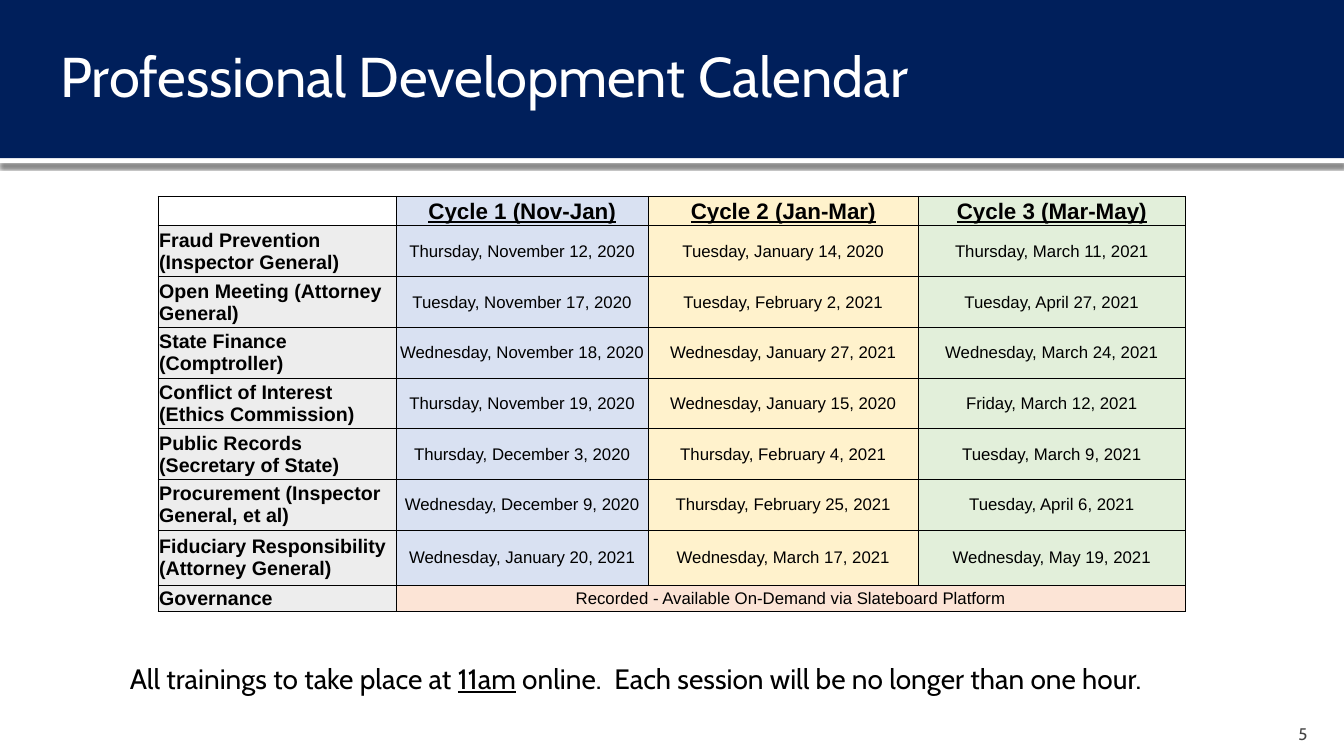
from dataclasses import dataclass

from lxml.etree import SubElement
from pptx import Presentation
from pptx.dml.color import RGBColor
from pptx.enum.shapes import MSO_SHAPE
from pptx.enum.text import MSO_ANCHOR, PP_ALIGN
from pptx.oxml import parse_xml
from pptx.oxml.ns import nsdecls, qn
from pptx.util import Pt

WIDE, HIGH = 960, 540
NAVY, WHITE, BLACK, GRAY = "001F5B", "FFFFFF", "000000", "454545"
SIDE, CLOUD = "EDEDED", "FCE4D6"
LEFT, MID, RIGHT = PP_ALIGN.LEFT, PP_ALIGN.CENTER, PP_ALIGN.RIGHT


@dataclass
class Cycle:
    name: str
    fill: str
    width: float


@dataclass
class Course:
    name: str
    dates: tuple[str, ...]
    height: float = 36.2


@dataclass
class Label:
    runs: tuple[str, ...]
    box: tuple[float, float, float, float]
    size: float
    color: str
    align: PP_ALIGN = LEFT
    anchor: MSO_ANCHOR = MSO_ANCHOR.TOP
    pads: tuple[float, float, float, float] = (7.2, 3.6, 7.2, 3.6)


CYCLES = [
    Cycle("Cycle 1 (Nov-Jan)", "D9E1F2", 180),
    Cycle("Cycle 2 (Jan-Mar)", "FFF2CC", 193),
    Cycle("Cycle 3 (Mar-May)", "E2EFDA", 190.7),
]
COURSES = [
    Course("Fraud Prevention (Inspector General)",
           ("Thursday, November 12, 2020", "Tuesday, January 14, 2020", "Thursday, March 11, 2021")),
    Course("Open Meeting (Attorney General)",
           ("Tuesday, November 17, 2020", "Tuesday, February 2, 2021", "Tuesday, April 27, 2021")),
    Course("State Finance (Comptroller)",
           ("Wednesday, November 18, 2020", "Wednesday, January 27, 2021", "Wednesday, March 24, 2021")),
    Course("Conflict of Interest (Ethics Commission)",
           ("Thursday, November 19, 2020", "Wednesday, January 15, 2020", "Friday, March 12, 2021")),
    Course("Public Records (Secretary of State)",
           ("Thursday, December 3, 2020", "Thursday, February 4, 2021", "Tuesday, March 9, 2021")),
    Course("Procurement (Inspector General, et al)",
           ("Wednesday, December 9, 2020", "Thursday, February 25, 2021", "Tuesday, April 6, 2021")),
    Course("Fiduciary Responsibility (Attorney General)",
           ("Wednesday, January 20, 2021", "Wednesday, March 17, 2021", "Wednesday, May 19, 2021"), 39.4),
    Course("Governance", ("Recorded - Available On-Demand via Slateboard Platform",), 18.7),
]
# In a label, every second run is underlined.
LABELS = [
    Label(("5",), (864, 509.8, 77, 21.6), 12, GRAY, RIGHT, MSO_ANCHOR.BOTTOM, (7.2, 3.6, 7.2, 0)),
    Label(("Professional Development Calendar",), (36, 20.2, 880, 66.2), 40, WHITE,
          LEFT, MSO_ANCHOR.MIDDLE, (7.2, 3.6, 3.6, 3.6)),
    Label(("All trainings to take place at ", "11am",
           " online.  Each session will be no longer than one hour."),
          (85.7, 468.7, 788.4, 31.7), 20, BLACK),
]


def paint(fill, color: str) -> None:
    fill.solid()
    fill.fore_color.rgb = RGBColor.from_string(color)


def style(font, name: str, size: float, color: str, bold: bool = False) -> None:
    font.name, font.size, font.bold = name, Pt(size), bold
    font.color.rgb = RGBColor.from_string(color)


def add_band(slide, top: float, height: float, color: str):
    band = slide.shapes.add_shape(MSO_SHAPE.RECTANGLE, 0, Pt(top), Pt(WIDE), Pt(height))
    band.shadow.inherit = False
    paint(band.fill, color)
    band.line.fill.background()
    return band


def cast(band) -> None:
    """Put a soft shadow below a band."""
    glow = parse_xml(
        f'<a:outerShdw {nsdecls("a")} blurRad="{Pt(2.5)}" dist="{Pt(2.5)}" dir="5400000" '
        f'algn="t" rotWithShape="0"><a:srgbClr val="{BLACK}"><a:alpha val="60000"/>'
        '</a:srgbClr></a:outerShdw>')
    band.element.spPr.find(qn("a:effectLst")).append(glow)


def add_label(slide, label: Label) -> None:
    frame = slide.shapes.add_textbox(*map(Pt, label.box)).text_frame
    frame.word_wrap = True
    frame.vertical_anchor = label.anchor
    (frame.margin_left, frame.margin_top,
     frame.margin_right, frame.margin_bottom) = map(Pt, label.pads)
    para = frame.paragraphs[0]
    para.alignment = label.align
    style(para.font, "Cabin", label.size, label.color)
    for place, text in enumerate(label.runs):
        run = para.add_run()
        run.text = text
        if place % 2:
            run.font.underline = True


def edge(cell, top: float, base: float) -> None:
    """Draw black borders: 1 point at the sides, the given widths above and below."""
    props = cell._tc.get_or_add_tcPr()
    for place, (tag, width) in enumerate((("lnL", 1), ("lnR", 1), ("lnT", top), ("lnB", base))):
        line = parse_xml(
            f'<a:{tag} {nsdecls("a")} w="{Pt(width)}"><a:solidFill>'
            f'<a:srgbClr val="{BLACK}"/></a:solidFill></a:{tag}>')
        props.insert(place, line)


def fill_cell(cell, text: str, color: str, size: float, bold: bool, align: PP_ALIGN) -> None:
    cell.margin_left = cell.margin_right = cell.margin_top = Pt(0.72)
    cell.margin_bottom = 0
    cell.vertical_anchor = MSO_ANCHOR.MIDDLE
    para = cell.text_frame.paragraphs[0]
    para.alignment = align
    style(para.font, "Arial", size, BLACK, bold)
    if text:
        para.add_run().text = text
        paint(cell.fill, color)
    else:
        cell.fill.background()
        SubElement(para._p, qn("a:endParaRPr"), sz=str(size * 100))


def add_dates(slide) -> None:
    widths = [170] + [cycle.width for cycle in CYCLES]
    heights = [20.9] + [course.height for course in COURSES]
    table = slide.shapes.add_table(
        len(heights), len(widths), Pt(113), Pt(140.4), Pt(sum(widths)), Pt(sum(heights))).table
    table.first_row = table.horz_banding = False
    for column, width in zip(table.columns, widths):
        column.width = Pt(width)
    for row, height in zip(table.rows, heights):
        row.height = Pt(height)

    fill_cell(table.cell(0, 0), "", WHITE, 12, False, LEFT)
    for col, cycle in enumerate(CYCLES, 1):
        head = table.cell(0, col)
        fill_cell(head, cycle.name, cycle.fill, 16, True, MID)
        head.text_frame.paragraphs[0].font.underline = True
    for row, course in enumerate(COURSES, 1):
        fill_cell(table.cell(row, 0), course.name, SIDE, 14, True, LEFT)
        whole = len(course.dates) == 1
        if whole:
            table.cell(row, 1).merge(table.cell(row, len(CYCLES)))
        for col, (date, cycle) in enumerate(zip(course.dates, CYCLES), 1):
            fill_cell(table.cell(row, col), date, CLOUD if whole else cycle.fill, 12, False, MID)

    last = len(COURSES)
    for row in range(last + 1):
        for col in range(len(widths)):
            edge(table.cell(row, col), 1 if row == 0 else 0.5, 1 if row == last else 0.5)


def main() -> None:
    deck = Presentation()
    deck.slide_width, deck.slide_height = Pt(WIDE), Pt(HIGH)
    slide = deck.slides.add_slide(deck.slide_layouts[6])
    cast(add_band(slide, 113, 3.6, WHITE))
    add_band(slide, 0, 113, NAVY)
    for label in LABELS:
        add_label(slide, label)
    add_dates(slide)
    deck.save("out.pptx")


if __name__ == "__main__":
    main()
